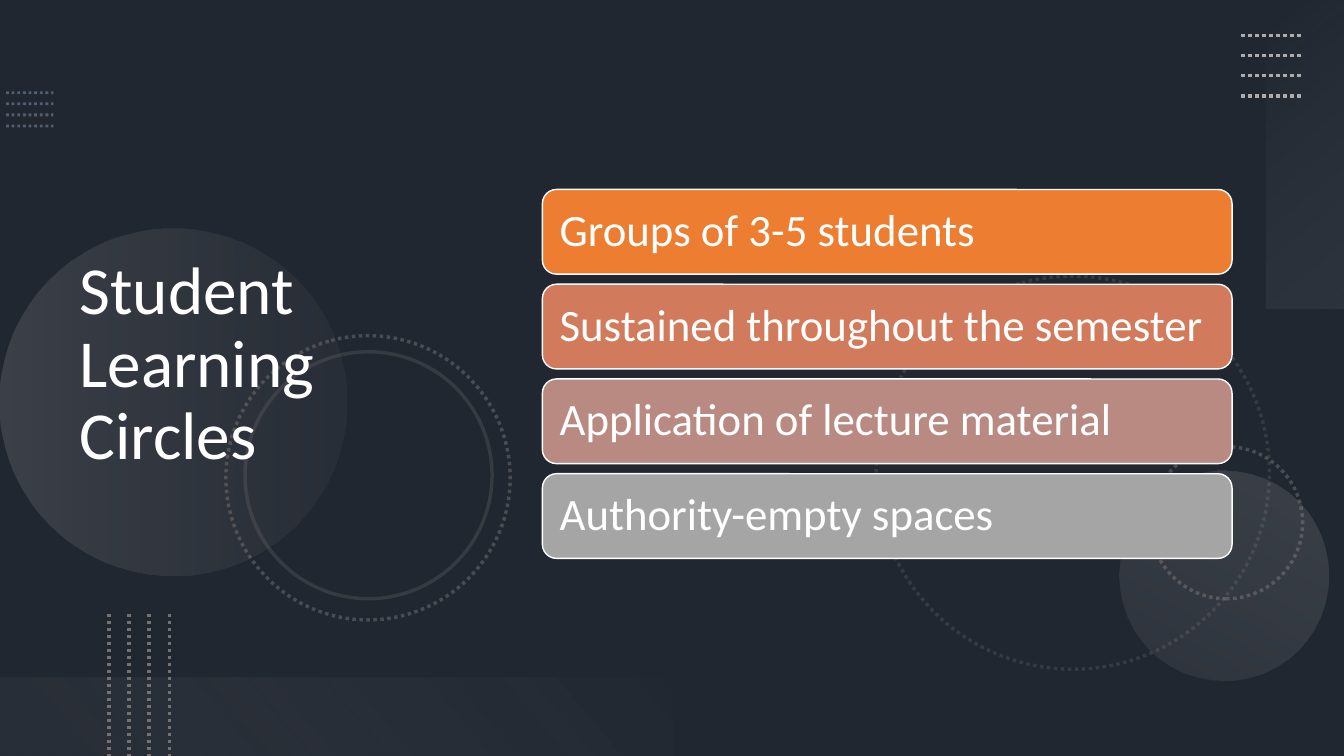
from lxml.etree import SubElement
from pptx import Presentation
from pptx.dml.color import RGBColor
from pptx.enum.dml import MSO_LINE
from pptx.enum.shapes import MSO_CONNECTOR, MSO_SHAPE
from pptx.enum.text import MSO_ANCHOR, PP_ALIGN
from pptx.oxml.ns import qn
from pptx.util import Inches, Pt


def color(value):
    return RGBColor.from_string(value)


class SlideBuilder:
    """Holds the text style and the current slide, and draws its elements."""

    font_name = "Calibri"
    text_color = "FFFFFF"

    def __init__(self, slide):
        self.slide = slide

    def background(self, value):
        fill = self.slide.background.fill
        fill.solid()
        fill.fore_color.rgb = color(value)

    def opacity(self, shape, query, percents):
        for element, percent in zip(shape._element.xpath(query), percents):
            SubElement(element, qn("a:alpha"), val=str(percent * 1000))

    def shape(self, kind, box, rotation=0):
        shape = self.slide.shapes.add_shape(kind, *map(Inches, box))
        shape.rotation = rotation
        shape.shadow.inherit = False
        shape.fill.background()
        shape.line.fill.background()
        return shape

    def solid(self, kind, box, value, percent=100):
        shape = self.shape(kind, box)
        shape.fill.solid()
        shape.fill.fore_color.rgb = color(value)
        self.opacity(shape, "./p:spPr/a:solidFill/a:srgbClr", [percent])
        return shape

    def gradient(self, kind, box, rotation, angle, stops):
        shape = self.shape(kind, box, rotation)
        shape.fill.gradient()
        shape.fill.gradient_angle = 360 - angle
        for stop, (position, value, _) in zip(shape.fill.gradient_stops, stops):
            stop.position = position
            stop.color.rgb = color(value)
        self.opacity(shape, ".//a:gs/a:srgbClr", [stop[2] for stop in stops])

    def stroke(self, shape, value, width, dotted=True, percent=100):
        shape.line.color.rgb = color(value)
        shape.line.width = Pt(width)
        if dotted:
            shape.line.dash_style = MSO_LINE.ROUND_DOT
        self.opacity(shape, ".//a:ln/a:solidFill/a:srgbClr", [percent])

    def ring(self, left, top, size, rotation, percent, dotted=True):
        shape = self.shape(MSO_SHAPE.OVAL, (left, top, size, size), rotation)
        self.stroke(shape, "767171", 2.5, dotted, percent)

    def dotted_lines(self, start, end, step, value, width=2.5, percent=100):
        for index in range(4):
            offset_x, offset_y = index * step[0], index * step[1]
            line = self.slide.shapes.add_connector(
                MSO_CONNECTOR.STRAIGHT,
                Inches(start[0] + offset_x), Inches(start[1] + offset_y),
                Inches(end[0] + offset_x), Inches(end[1] + offset_y))
            self.stroke(line, value, width, percent=percent)
            SubElement(line._element.spPr, qn("a:effectLst"))

    def set_text(self, shape, text, size, inset):
        frame = shape.text_frame
        frame.word_wrap = True
        frame.vertical_anchor = MSO_ANCHOR.MIDDLE
        frame.margin_left = frame.margin_right = Inches(inset)
        frame.margin_top = frame.margin_bottom = Inches(inset)
        paragraph = frame.paragraphs[0]
        paragraph.text = text
        paragraph.alignment = PP_ALIGN.LEFT
        paragraph.line_spacing = 0.9
        paragraph.font.name = self.font_name
        paragraph.font.size = Pt(size)
        paragraph.font.color.rgb = color(self.text_color)

    def title(self, text, box):
        self.set_text(self.slide.shapes.add_textbox(*map(Inches, box)), text, 48, 0.1)

    def card(self, text, box, value):
        shape = self.solid(MSO_SHAPE.ROUNDED_RECTANGLE, box, value)
        self.stroke(shape, "FFFFFF", 1, dotted=False)
        self.set_text(shape, text, 32, 0.13)


def main():
    presentation = Presentation()
    presentation.slide_width = Inches(13.33)
    presentation.slide_height = Inches(7.5)
    builder = SlideBuilder(presentation.slides.add_slide(presentation.slide_layouts[6]))

    builder.background("44546A")
    builder.solid(MSO_SHAPE.RECTANGLE, (0, 0, 13.33, 7.5), "000000", 53)
    builder.dotted_lines((0.06, 0.92), (0.53, 0.92), (0, 0.11), "8497B0", 2, 50)

    builder.ring(8.69, 2.74, 3.9, 75, 25)
    builder.ring(11.41, 4.43, 1.51, 270, 50)
    builder.gradient(MSO_SHAPE.OVAL, (0, 2.27, 3.44, 3.44), 270, 90,
                     [(0, "AFABAB", 20), (1, "767171", 10)])
    builder.gradient(MSO_SHAPE.OVAL, (11.1, 4.67, 2.08, 2.08), 210, 90,
                     [(0, "AFABAB", 10), (1, "AFABAB", 20)])
    builder.ring(2.24, 3.33, 2.82, 75, 50)
    builder.ring(2.43, 3.49, 2.45, 75, 25, dotted=False)

    builder.gradient(MSO_SHAPE.RECTANGLE, (11.42, 1.14, 3.06, 0.78), 270, 140,
                     [(0, "F5F5F5", 0), (1, "AFABAB", 10)])
    builder.dotted_lines((12.31, 0.35), (12.91, 0.35), (0, 0.2), "AFABAB")
    builder.gradient(MSO_SHAPE.RECTANGLE, (0, 6.72, 6.67, 0.78), 180, 140,
                     [(0.1, "767171", 10), (1, "F1F0F0", 0)])
    builder.dotted_lines((1.08, 6.09), (1.08, 7.5), (0.2, 0), "767171")

    builder.title("Student\vLearning\vCircles", (0.69, 0.54, 4.59, 6.17))
    cards = [
        ("Groups of 3-5 students", "ED7D31"),
        ("Sustained throughout the semester", "D17B5C"),
        ("Application of lecture material", "B98A82"),
        ("Authority-empty spaces", "A5A5A5"),
    ]
    for index, (text, value) in enumerate(cards):
        builder.card(text, (5.38, 1.88 + index * 0.94, 6.84, 0.84), value)

    presentation.save("out.pptx")


if __name__ == "__main__":
    main()
